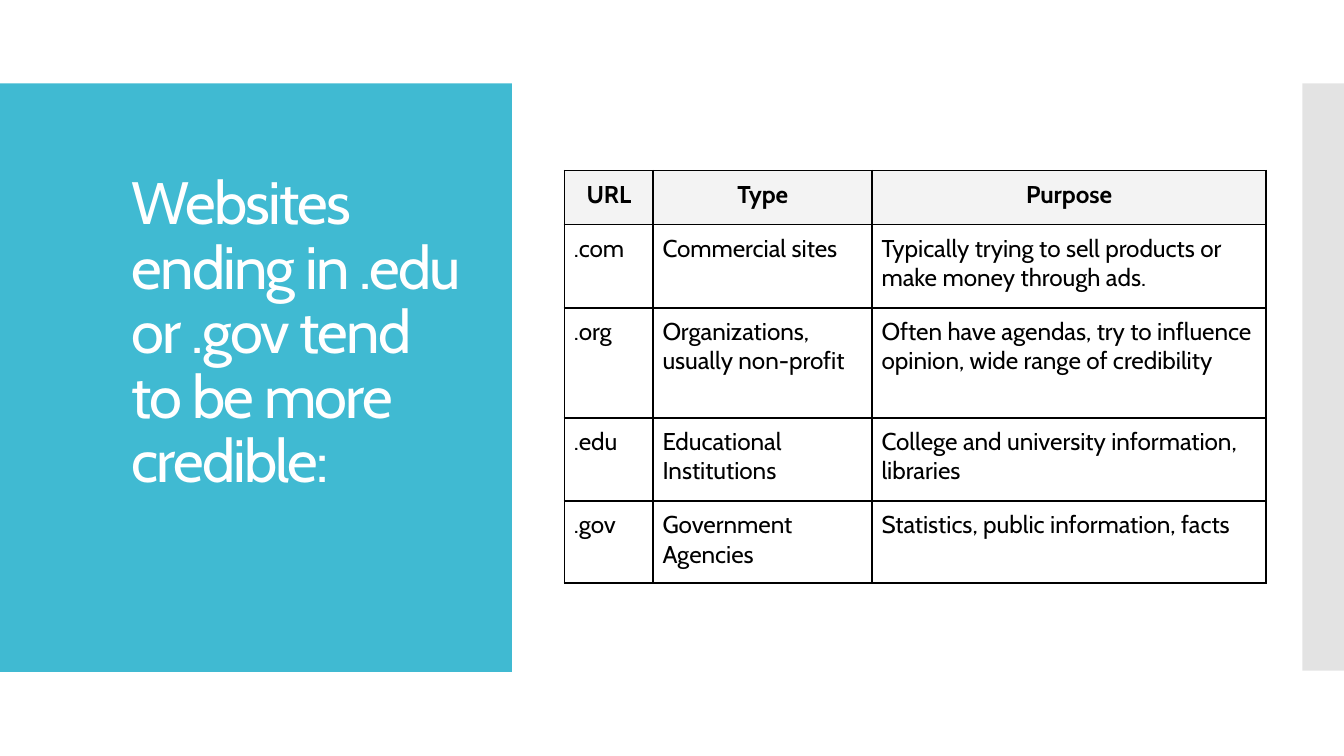
from lxml import etree
from pptx import Presentation
from pptx.dml.color import RGBColor
from pptx.enum.shapes import MSO_SHAPE
from pptx.enum.text import MSO_ANCHOR, MSO_AUTO_SIZE, PP_ALIGN
from pptx.oxml.ns import qn
from pptx.util import Inches, Pt

RECTANGLE = MSO_SHAPE.RECTANGLE
BOTTOM = MSO_ANCHOR.BOTTOM
NO_AUTOFIT = MSO_AUTO_SIZE.NONE
LEFT, CENTER = PP_ALIGN.LEFT, PP_ALIGN.CENTER

FONT = "Cabin"
BLACK, WHITE, TEAL = "000000", "FFFFFF", "40BAD2"
GREY, HEADER_GREY = "C8C8C8", "F3F3F3"

TITLE = "Websites ending in .edu or .gov tend to be more credible:"
COLUMN_WIDTHS = [0.66, 1.63, 2.93]
ROW_HEIGHTS = [0.4, 0.62, 0.82, 0.62, 0.61]
ROWS = [
    ["URL", "Type", "Purpose"],
    [".com", "Commercial sites",
     "Typically trying to sell products or make money through ads."],
    [".org", "Organizations, usually non-profit",
     "Often have agendas, try to influence opinion, wide range of credibility"],
    [".edu", "Educational Institutions",
     "College and university information, libraries"],
    [".gov", "Government Agencies", "Statistics, public information, facts"],
]


def rgb(color):
    return RGBColor.from_string(color)


def set_font(p, size, color, bold=False):
    p.font.name = FONT
    p.font.size = Pt(size)
    p.font.bold = bold
    p.font.color.rgb = rgb(color)


def add_panel(s, x, y, w, h, color, opacity=100):
    panel = s.shapes.add_shape(RECTANGLE, Inches(x), Inches(y), Inches(w), Inches(h))
    panel.shadow.inherit = False
    panel.line.fill.background()
    panel.fill.solid()
    panel.fill.fore_color.rgb = rgb(color)
    if opacity < 100:
        clr = panel.fill._xPr.find(".//" + qn("a:srgbClr"))
        etree.SubElement(clr, qn("a:alpha"), val=str(opacity * 1000))


def add_title(s, text, x, y, w, h):
    title = s.shapes.title
    s.shapes._spTree.append(title._element)  # bring in front of the panels
    title.left, title.top = Inches(x), Inches(y)
    title.width, title.height = Inches(w), Inches(h)
    tf = title.text_frame
    tf.word_wrap = True
    tf.auto_size = NO_AUTOFIT
    tf.vertical_anchor = BOTTOM
    p = tf.paragraphs[0]
    r = p.add_run()
    r.text = text
    p.alignment = LEFT
    p.line_spacing = 0.9
    p.space_after = Pt(6)
    set_font(p, 32, WHITE)
    r.font._element.set("spc", "-100")


def add_borders(cell, color, width):
    tc_pr = cell._tc.get_or_add_tcPr()
    for i, side in enumerate(("lnL", "lnR", "lnT", "lnB")):
        ln = etree.Element(qn("a:" + side), w=str(Pt(width)))
        fill = etree.SubElement(ln, qn("a:solidFill"))
        etree.SubElement(fill, qn("a:srgbClr"), val=color)
        tc_pr.insert(i, ln)


def format_cell(cell, text, header):
    cell.text = text
    cell.margin_left = cell.margin_right = Inches(0.07)
    cell.margin_top = cell.margin_bottom = Inches(0.07)
    p = cell.text_frame.paragraphs[0]
    p.alignment = CENTER if header else LEFT
    set_font(p, 13, BLACK, bold=header)
    if header:
        cell.fill.solid()
        cell.fill.fore_color.rgb = rgb(HEADER_GREY)
    else:
        cell.fill.background()
    add_borders(cell, BLACK, 1)


def add_domain_table(s, x, y):
    table = s.shapes.add_table(
        len(ROWS), len(COLUMN_WIDTHS), Inches(x), Inches(y),
        Inches(sum(COLUMN_WIDTHS)), Inches(sum(ROW_HEIGHTS))).table
    table.first_row = table.horz_banding = False
    for column, width in zip(table.columns, COLUMN_WIDTHS):
        column.width = Inches(width)
    for row, height in zip(table.rows, ROW_HEIGHTS):
        row.height = Inches(height)
    for i, texts in enumerate(ROWS):
        for j, text in enumerate(texts):
            format_cell(table.cell(i, j), text, header=i == 0)


def main():
    prs = Presentation()
    prs.slide_width = Inches(10)
    prs.slide_height = Inches(10 * 9 / 16)
    s = prs.slides.add_slide(prs.slide_layouts.get_by_name("Title Only"))
    add_panel(s, 0, 0.62, 3.81, 4.38, TEAL)
    add_panel(s, 9.69, 0.62, 0.31, 4.37, GREY, opacity=50)
    add_title(s, TITLE, 0.88, 1.07, 2.67, 2.67)
    add_domain_table(s, 4.2, 1.27)
    prs.save("out.pptx")


if __name__ == "__main__":
    main()
